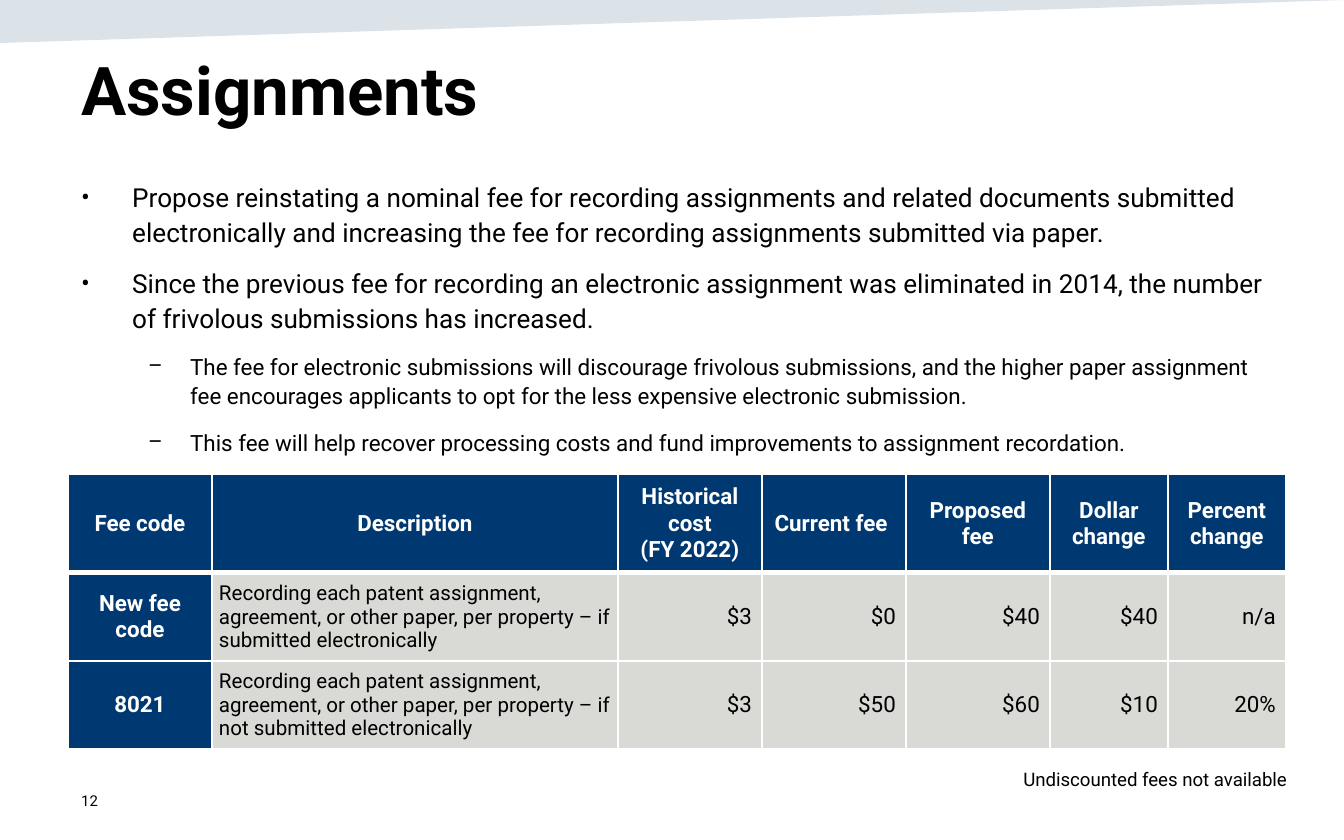
import pptx
import pptx.dml.color
import pptx.enum.text
import pptx.oxml
import pptx.oxml.ns
import pptx.util

EMU_PER_PX = 914400 / 134.4
FONT = "Roboto"
COLORS = {"band": "164469", "navy": "003971", "grey": "D9D9D6", "white": "FFFFFF", "black": "000000"}
ALIGN = pptx.enum.text.PP_ALIGN
ANCHOR = pptx.enum.text.MSO_ANCHOR

BULLETS = [
    (0, "Propose reinstating a nominal fee for recording assignments and related documents submitted "
        "electronically and increasing the fee for recording assignments submitted via paper."),
    (0, "Since the previous fee for recording an electronic assignment was eliminated in 2014, the number "
        "of frivolous submissions has increased."),
    (1, "The fee for electronic submissions will discourage frivolous submissions, and the higher paper "
        "assignment fee encourages applicants to opt for the less expensive electronic submission."),
    (1, "This fee will help recover processing costs and fund improvements to assignment recordation."),
]
BULLET_LEVELS = [
    {"mark": "•", "margin": 51, "indent": -51, "size": 14},
    {"mark": "–", "margin": 109, "indent": -42, "size": 12},
]
FEES = [
    ["Fee code", "Description", "Historical cost\n(FY 2022)", "Current fee ", "Proposed fee",
     "Dollar change", "Percent change"],
    ["New fee code", "Recording each patent assignment, agreement, or other paper, per property – "
     "if submitted electronically", "$3", "$0", "$40", "$40", "n/a"],
    ["8021", "Recording each patent assignment, agreement, or other paper, per property – "
     "if not submitted electronically", "$3", "$50", "$60", "$10", "20%"],
]
COLUMN_WIDTHS = [144, 406, 144, 144, 144, 118, 118]
ROW_HEIGHTS = [99, 85, 85]


def px(length):
    return pptx.util.Emu(round(length * EMU_PER_PX))


def rgb(name):
    return pptx.dml.color.RGBColor.from_string(COLORS[name])


def add_xml(parent, tag, body="", **attributes):
    listed = " ".join(f'{key}="{value}"' for key, value in attributes.items())
    element = pptx.oxml.parse_xml(f'<a:{tag} {pptx.oxml.ns.nsdecls("a")} {listed}>{body}</a:{tag}>')
    parent.append(element)


def style(paragraph, size, color="black", bold=False, align=ALIGN.LEFT):
    paragraph.alignment = align
    for run in paragraph.runs:
        run.font.name = FONT
        run.font.size = pptx.util.Pt(size)
        run.font.bold = bold
        run.font.color.rgb = rgb(color)


def add_text(slide, box, text, size, anchor=ANCHOR.TOP, **look):
    frame = slide.shapes.add_textbox(*map(px, box)).text_frame
    frame.word_wrap = True
    frame.vertical_anchor = anchor
    frame.text = text
    for paragraph in frame.paragraphs:
        style(paragraph, size, **look)
    return frame


def add_band(slide):
    outline = slide.shapes.build_freeform(0, 0, scale=EMU_PER_PX)
    outline.add_line_segments([(0, 43), (1344, 0)], close=True)
    band = outline.convert_to_shape()
    band.shadow.inherit = False
    band.line.fill.background()
    band.fill.solid()
    band.fill.fore_color.rgb = rgb("band")
    tint = band.fill._xPr.find(".//" + pptx.oxml.ns.qn("a:srgbClr"))
    add_xml(tint, "alpha", val=15000)


def add_bullets(slide, box):
    frame = add_text(slide, box, "\n".join(text for _, text in BULLETS), 14)
    for paragraph, (depth, _) in zip(frame.paragraphs, BULLETS):
        level = BULLET_LEVELS[depth]
        style(paragraph, level["size"])
        paragraph.level = depth
        paragraph.line_spacing = 1.1
        paragraph.space_before = pptx.util.Pt(9)
        properties = paragraph._p.get_or_add_pPr()
        properties.set("marL", str(px(level["margin"])))
        properties.set("indent", str(px(level["indent"])))
        add_xml(properties, "buFont", typeface=FONT)
        add_xml(properties, "buChar", char=level["mark"])


def set_borders(cell, bottom, top):
    properties = cell._tc.get_or_add_tcPr()
    white = f'<a:solidFill><a:srgbClr val="{COLORS["white"]}"/></a:solidFill>'
    for index, (side, points) in enumerate({"lnL": 1, "lnR": 1, "lnT": top, "lnB": bottom}.items()):
        add_xml(properties, side, white, w=pptx.util.Pt(points))
        properties.insert(index, properties[-1])


def fill_cell(cell, text, row, column):
    header = row == 0
    label = header or column == 0
    description = column == 1 and not header
    cell.text = text
    cell.vertical_anchor = ANCHOR.MIDDLE
    cell.margin_left = cell.margin_right = px(7 if description else 10)
    cell.margin_top = cell.margin_bottom = px(7 if description else 0)
    cell.fill.solid()
    cell.fill.fore_color.rgb = rgb("navy" if label else "grey")
    set_borders(cell, bottom=3 if header else 1, top=3 if row == 1 else 1)
    for paragraph in cell.text_frame.paragraphs:
        if label:
            style(paragraph, 12, "white", True, ALIGN.CENTER)
        elif description:
            style(paragraph, 11)
        else:
            style(paragraph, 12, align=ALIGN.RIGHT)


def add_fee_table(slide, left, top):
    fees = slide.shapes.add_table(
        len(ROW_HEIGHTS), len(COLUMN_WIDTHS), px(left), px(top),
        px(sum(COLUMN_WIDTHS)), px(sum(ROW_HEIGHTS))).table
    for column, width in zip(fees.columns, COLUMN_WIDTHS):
        column.width = px(width)
    for row, height in zip(fees.rows, ROW_HEIGHTS):
        row.height = px(height)
    for row, texts in enumerate(FEES):
        for column, text in enumerate(texts):
            fill_cell(fees.cell(row, column), text, row, column)


def main():
    """Build the slide on assignment recording fees."""
    deck = pptx.Presentation()
    deck.slide_width, deck.slide_height = px(1344), px(840)
    slide = deck.slides.add_slide(deck.slide_layouts[6])
    add_band(slide)
    add_text(slide, (68, 778, 302, 45), "12", 8, anchor=ANCHOR.MIDDLE)
    add_text(slide, (68, 42, 1210, 140), "Assignments", 36, bold=True)
    add_bullets(slide, (68, 172, 1210, 300))
    add_fee_table(slide, 68, 474)
    add_text(slide, (68, 761, 1232, 36), "Undiscounted fees not available", 10, align=ALIGN.RIGHT)
    deck.save("out.pptx")


if __name__ == "__main__":
    main()
